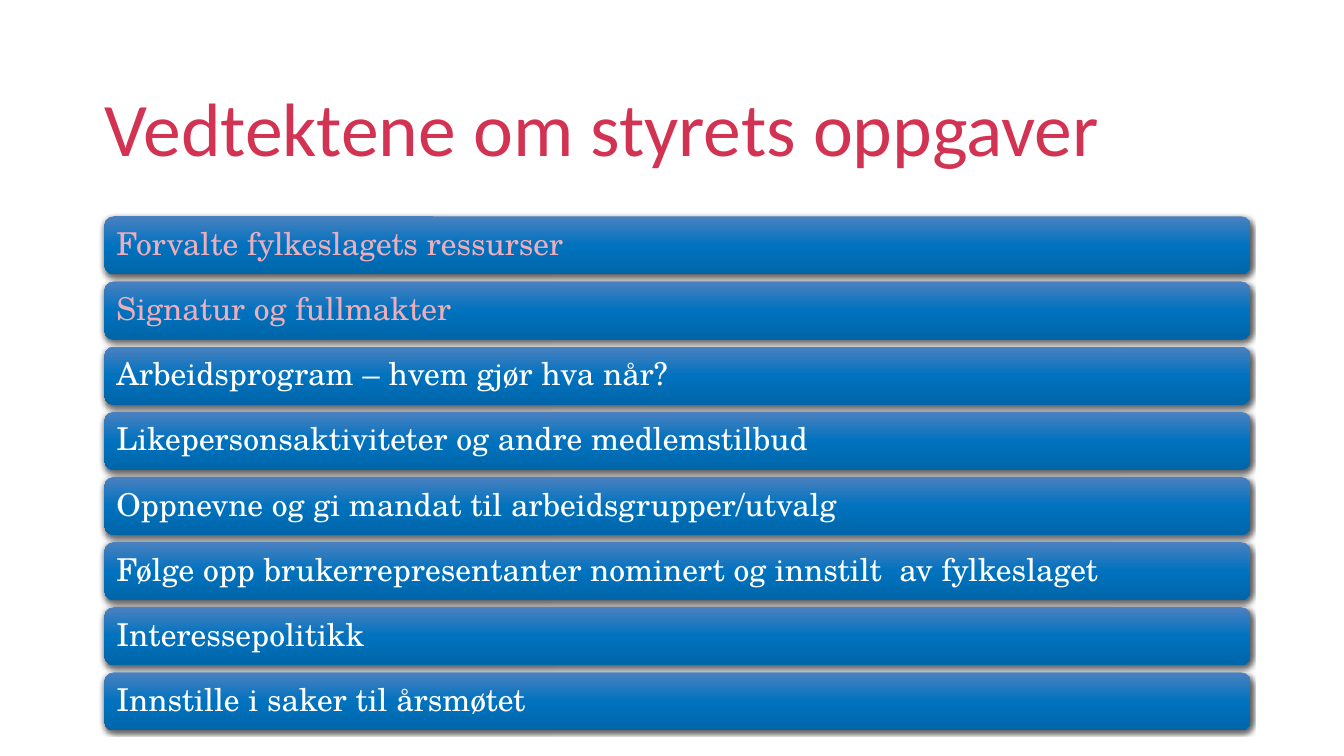
from copy import deepcopy
from dataclasses import dataclass

from lxml import etree
from pptx import Presentation
from pptx.dml.color import RGBColor
from pptx.enum.shapes import MSO_SHAPE
from pptx.enum.text import MSO_ANCHOR, PP_ALIGN
from pptx.oxml.ns import qn
from pptx.util import Pt

ROUNDED = MSO_SHAPE.ROUNDED_RECTANGLE
BOTTOM, MIDDLE = MSO_ANCHOR.BOTTOM, MSO_ANCHOR.MIDDLE
LEFT_ALIGNED = PP_ALIGN.LEFT

COLOURS = {
    "title": "D33352",
    "done": "EDADBA",
    "open": "FFFFFF",
    "bar_top": "4B81C0",
    "bar_middle": "0072BE",
    "bar_bottom": "0065A9",
    "shadow": "000000",
}
BAR_STOPS = ((0, "bar_top"), (0.5, "bar_middle"), (1, "bar_bottom"))

LEFT, WIDTH = 99.4, 1091.5
TITLE_TOP, TITLE_HEIGHT = 23, 142
BAR_TOP, BAR_HEIGHT, BAR_PITCH = 206, 55.4, 62.05
BAR_INSET = 8.8


@dataclass
class Task:
    wording: str
    colour: str = "open"


TASKS = (
    Task("Forvalte fylkeslagets ressurser", "done"),
    Task("Signatur og fullmakter", "done"),
    Task("Arbeidsprogram – hvem gjør hva når?"),
    Task("Likepersonsaktiviteter og andre medlemstilbud"),
    Task("Oppnevne og gi mandat til arbeidsgrupper/utvalg"),
    Task("Følge opp brukerrepresentanter nominert og innstilt  av fylkeslaget"),
    Task("Interessepolitikk"),
    Task("Innstille i saker til årsmøtet"),
)


def write(shape, wording: str, font_name: str, size: float, colour: str,
          anchor, inset: float = 0) -> None:
    frame = shape.text_frame
    frame.word_wrap = True
    frame.vertical_anchor = anchor
    frame.margin_left = frame.margin_right = Pt(inset)
    frame.margin_top = frame.margin_bottom = 0
    paragraph = frame.paragraphs[0]
    paragraph.text = wording
    paragraph.alignment = LEFT_ALIGNED
    paragraph.line_spacing = 0.9
    paragraph.font.name = font_name
    paragraph.font.size = Pt(size)
    paragraph.font.color.rgb = RGBColor.from_string(COLOURS[colour])


def fill_with_gradient(shape) -> None:
    """Give the shape a three-stop gradient running from top to bottom."""
    shape.fill.gradient()
    shape.fill.gradient_angle = 270
    stop_list = shape._element.spPr.find(qn("a:gradFill")).find(qn("a:gsLst"))
    stop_list.append(deepcopy(stop_list[-1]))
    for stop, (position, colour) in zip(shape.fill.gradient_stops, BAR_STOPS):
        stop.position = position
        stop.color.rgb = RGBColor.from_string(COLOURS[colour])


def add_shadow(shape) -> None:
    """Add a soft shadow just below the shape."""
    shape.shadow.inherit = False
    effects = shape._element.spPr.find(qn("a:effectLst"))
    shadow = etree.SubElement(
        effects, qn("a:outerShdw"), blurRad=str(Pt(4.5)), dist=str(Pt(1.5)),
        dir="5400000", algn="ctr", rotWithShape="0")
    colour = etree.SubElement(shadow, qn("a:srgbClr"), val=COLOURS["shadow"])
    etree.SubElement(colour, qn("a:alpha"), val="63000")


def add_task_bar(slide, task: Task, top: float) -> None:
    bar = slide.shapes.add_shape(ROUNDED, Pt(LEFT), Pt(top), Pt(WIDTH), Pt(BAR_HEIGHT))
    fill_with_gradient(bar)
    bar.line.fill.background()
    add_shadow(bar)
    write(bar, task.wording, "TeX Gyre Schola", 30, task.colour, MIDDLE, BAR_INSET)


def main() -> None:
    presentation = Presentation()
    presentation.slide_width = Pt(1280)
    presentation.slide_height = Pt(720)
    slide = presentation.slides.add_slide(presentation.slide_layouts[6])

    title = slide.shapes.add_textbox(Pt(LEFT), Pt(TITLE_TOP), Pt(WIDTH), Pt(TITLE_HEIGHT))
    write(title, "Vedtektene om styrets oppgaver", "Calibri", 72, "title", BOTTOM)

    for row, task in enumerate(TASKS):
        add_task_bar(slide, task, BAR_TOP + row * BAR_PITCH)

    presentation.save("out.pptx")


if __name__ == "__main__":
    main()
